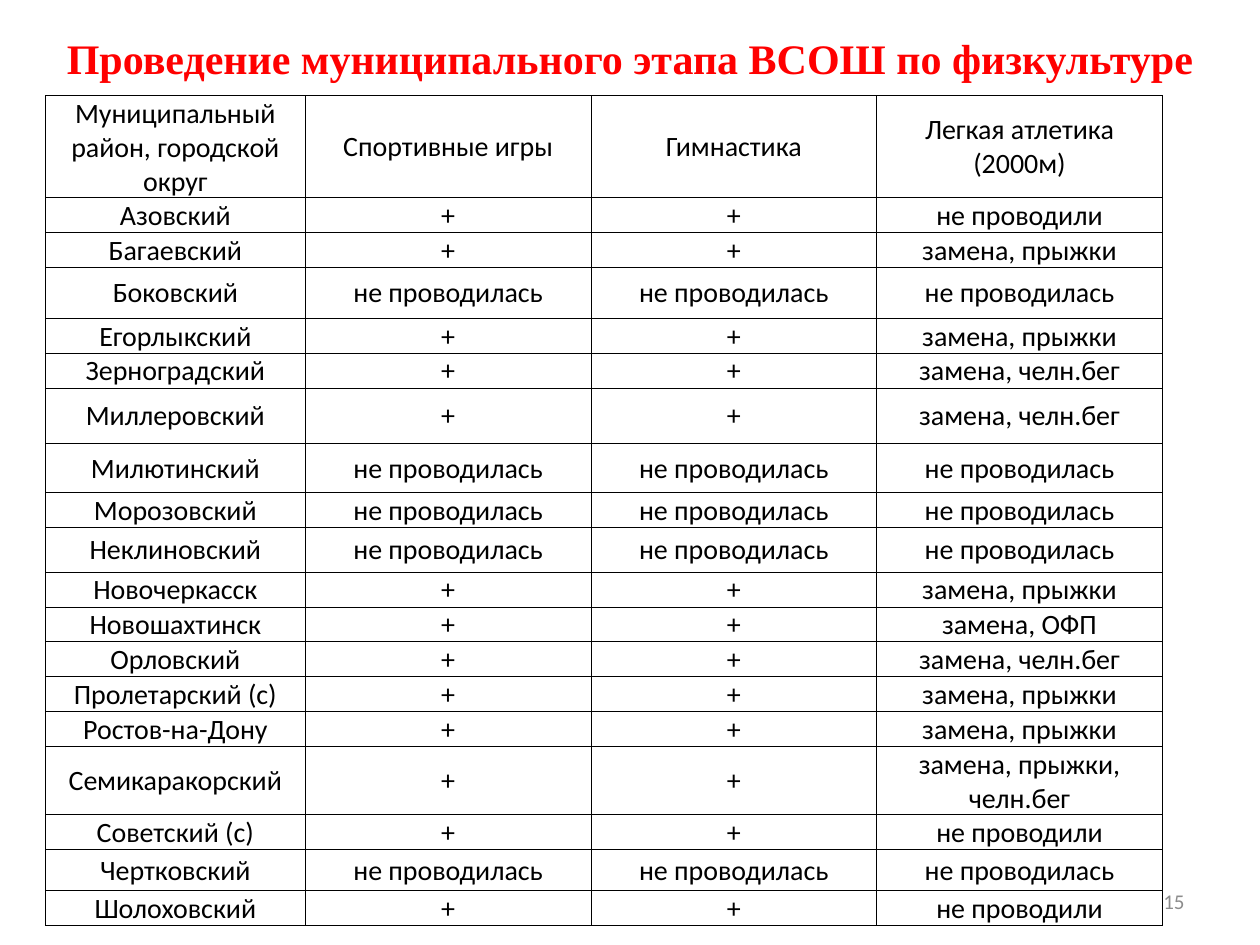
from lxml.etree import SubElement
from pptx import Presentation
from pptx.dml.color import RGBColor
from pptx.enum.text import MSO_ANCHOR as Anchor, PP_ALIGN as Align
from pptx.oxml.ns import qn
from pptx.util import Pt

COLORS = {"title": "FF0000", "text": "000000", "border": "000000", "number": "8C8C8C"}
COLUMN_WIDTHS = [148.5, 163.25, 163.25, 163.25]
LINE = 18.7  # height of a plain one-line row

HEADER = ["Муниципальный район, городской округ", "Спортивные игры",
          "Гимнастика", "Легкая атлетика (2000м)"]
HELD = "+"
MISSED = "не проводилась"
NOT_RUN = "не проводили"
JUMPS = "замена, прыжки"
SHUTTLE = "замена, челн.бег"

# District, games and gymnastics, athletics, row height
DISTRICTS = [
    ("Азовский", HELD, NOT_RUN, LINE),
    ("Багаевский", HELD, JUMPS, LINE),
    ("Боковский", MISSED, MISSED, 29.2),
    ("Егорлыкский", HELD, JUMPS, LINE),
    ("Зерноградский", HELD, SHUTTLE, LINE),
    ("Миллеровский", HELD, SHUTTLE, 31.8),
    ("Милютинский", MISSED, MISSED, 28),
    ("Морозовский", MISSED, MISSED, 8),
    ("Неклиновский", MISSED, MISSED, 25.6),
    ("Новочеркасск", HELD, JUMPS, LINE),
    ("Новошахтинск", HELD, "замена, ОФП", LINE),
    ("Орловский", HELD, SHUTTLE, LINE),
    ("Пролетарский (с)", HELD, JUMPS, LINE),
    ("Ростов-на-Дону", HELD, JUMPS, LINE),
    ("Семикаракорский", HELD, "замена, прыжки, челн.бег", 2 * LINE),
    ("Советский (с)", HELD, NOT_RUN, LINE),
    ("Чертковский", MISSED, MISSED, 23.6),
    ("Шолоховский", HELD, NOT_RUN, LINE),
]


def write_text(frame, text, size, color, align, anchor, name="Calibri", bold=False):
    frame.text = text
    frame.word_wrap = True
    frame.vertical_anchor = anchor
    para = frame.paragraphs[0]
    para.alignment = align
    font = para.font
    font.name, font.size, font.bold = name, Pt(size), bold
    font.color.rgb = RGBColor.from_string(COLORS[color])


def add_title(page, text):
    title = page.shapes.title
    title.left, title.top, title.width, title.height = Pt(25.2), Pt(15), Pt(669.6), Pt(96.5)
    write_text(title.text_frame, text, 24, "title", Align.CENTER, Anchor.TOP,
               "Times New Roman", True)


def add_page_number(page, text):
    box = page.shapes.add_textbox(Pt(516), Pt(500.5), Pt(168), Pt(28.8))
    write_text(box.text_frame, text, 12, "number", Align.RIGHT, Anchor.MIDDLE)


def add_borders(cell):
    props = cell._tc.get_or_add_tcPr()
    for position, side in enumerate(("lnL", "lnR", "lnT", "lnB")):
        line = SubElement(props, qn(f"a:{side}"), w=str(Pt(0.5)))
        fill = SubElement(line, qn("a:solidFill"))
        SubElement(fill, qn("a:srgbClr"), val=COLORS["border"])
        props.insert(position, line)  # borders come before the fill


def fill_cell(cell, text):
    cell.margin_left = cell.margin_right = cell.margin_top = Pt(0.7)
    cell.margin_bottom = 0
    write_text(cell.text_frame, text, 16, "text", Align.CENTER, Anchor.MIDDLE)
    cell.vertical_anchor = Anchor.MIDDLE
    cell.fill.background()
    add_borders(cell)


def add_results_table(page):
    rows = [(HEADER, 2 * LINE)]
    rows += [([district, indoor, indoor, athletics], height)
             for district, indoor, athletics, height in DISTRICTS]
    table = page.shapes.add_table(len(rows), len(HEADER), Pt(26), Pt(54.6),
                                  Pt(sum(COLUMN_WIDTHS)), Pt(474)).table
    table.first_row = table.horz_banding = False
    for column, width in zip(table.columns, COLUMN_WIDTHS):
        column.width = Pt(width)
    for row, (texts, height) in zip(table.rows, rows):
        row.height = Pt(height)
        for cell, text in zip(row.cells, texts):
            fill_cell(cell, text)


def main():
    deck = Presentation()
    deck.slide_width, deck.slide_height = Pt(720), Pt(540)
    page = deck.slides.add_slide(deck.slide_layouts[5])  # title only

    add_page_number(page, "15")
    add_results_table(page)
    add_title(page, "Проведение муниципального этапа ВСОШ по физкультуре")

    deck.save("out.pptx")


if __name__ == "__main__":
    main()
